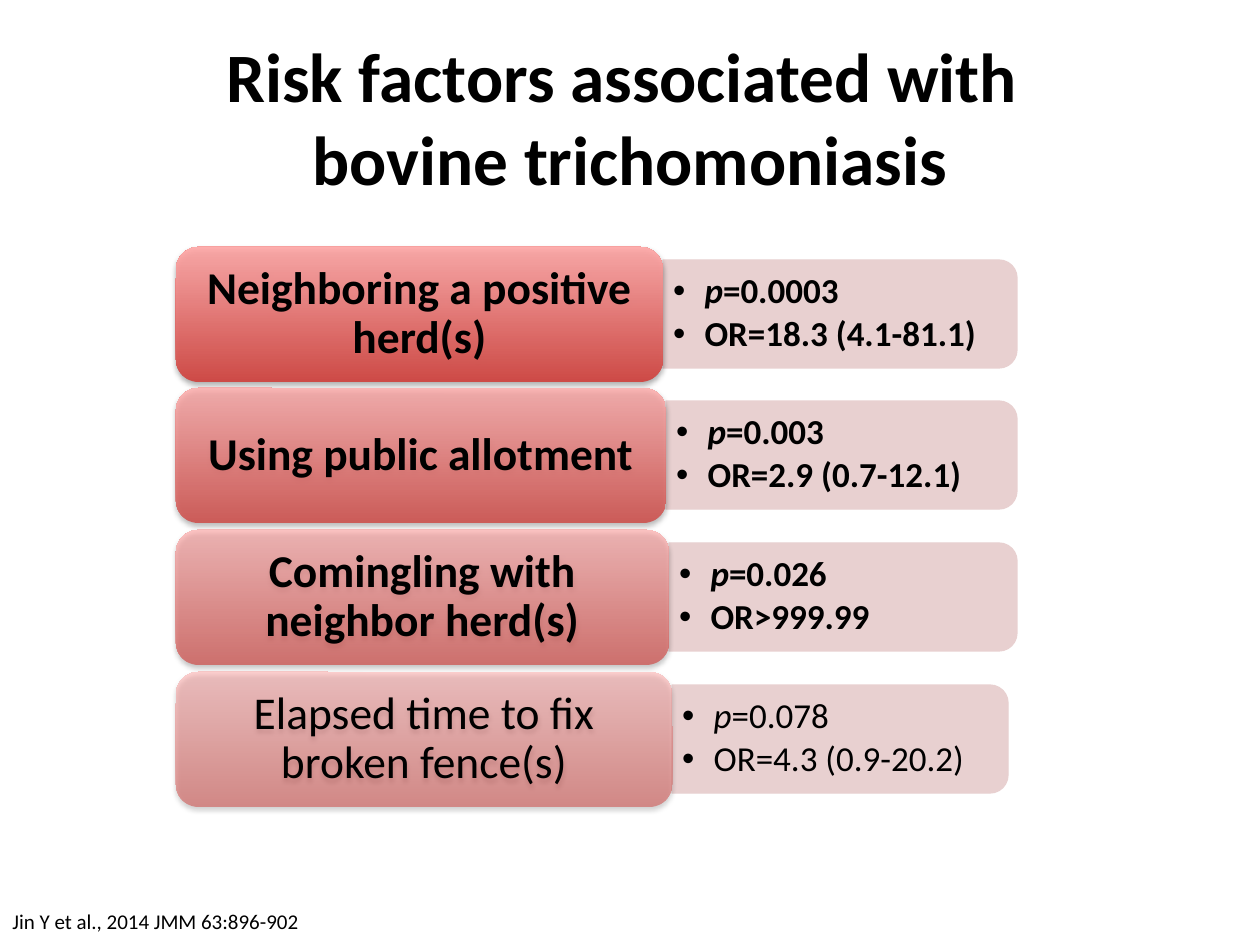
"""Build the slide on risk factors associated with bovine trichomoniasis."""
from lxml import etree
from pptx import Presentation
from pptx.dml.color import RGBColor
from pptx.enum.shapes import MSO_SHAPE as Shape
from pptx.enum.text import MSO_ANCHOR as Anchor, PP_ALIGN as Align
from pptx.oxml import parse_xml
from pptx.oxml.ns import nsdecls, qn
from pptx.util import Emu, Inches, Pt


def px(*lengths):
    return [Emu(round(n * 914400 / 126)) for n in lengths]


def style(r, size, bold=False, italic=False):
    r.font.name, r.font.size = "Calibri", Pt(size)
    r.font.bold, r.font.italic = bold, italic
    r.font.color.rgb = RGBColor.from_string("000000")


SHADOW = (
    f'<a:effectLst {nsdecls("a")}><a:outerShdw blurRad="39370" dist="22860" dir="5400000" '
    'rotWithShape="0"><a:srgbClr val="000000"><a:alpha val="35000"/></a:srgbClr>'
    '</a:outerShdw></a:effectLst>'
)
LEFT, TOP, PILL_H, PANEL_H = 176, 247, 135, 108
rows = [
    ("Neighboring a positive herd(s)", "=0.0003", "OR=18.3 (4.1-81.1)", 487, 1017, 90, True),
    ("Using public allotment", "=0.003", "OR=2.9 (0.7-12.1)", 490, 1017, 77, True),
    ("Comingling with neighbor herd(s)", "=0.026", "OR>999.99", 493, 1017, 63, True),
    ("Elapsed time to fix broken fence(s)", "=0.078", "OR=4.3 (0.9-20.2)", 496, 1008, 50, False),
]

prs = Presentation()
prs.slide_width, prs.slide_height = px(1260, 945)
s = prs.slides.add_slide(prs.slide_layouts[5])

title = s.shapes.title
title.left, title.top, title.width, title.height = px(63, 38, 1134, 157)
title.text_frame.text = "Risk factors associated with \vbovine trichomoniasis"
title.text_frame.vertical_anchor = Anchor.MIDDLE
p = title.text_frame.paragraphs[0]
p.alignment = Align.CENTER
for r in p.runs:
    style(r, 39.6, True)

for i, (label, p_value, odds, pill_w, right, alpha, bold) in enumerate(rows):
    top = TOP + i * 425 // 3
    panel_x, panel_y = LEFT + pill_w, top + (PILL_H - PANEL_H) // 2
    panel_w = right - panel_x

    panel = s.shapes.add_shape(
        Shape.ROUND_2_SAME_RECTANGLE,
        *px(panel_x + (panel_w - PANEL_H) / 2, panel_y + (PANEL_H - panel_w) / 2, PANEL_H, panel_w),
    )
    panel.rotation = 90
    panel.shadow.inherit = False
    panel.fill.solid()
    panel.fill.fore_color.rgb = RGBColor.from_string("E8D0D0")
    panel.line.color.rgb = RGBColor.from_string("E8D0D0")
    panel.line.width = Pt(0.75)

    tf = s.shapes.add_textbox(*px(panel_x, panel_y, panel_w - 5, PANEL_H)).text_frame
    tf.word_wrap, tf.vertical_anchor = True, Anchor.MIDDLE
    tf.margin_left = tf.margin_right = Inches(0.08)
    tf.margin_top = tf.margin_bottom = Inches(0.04)
    tf.text = f"p\n{odds}"
    tf.paragraphs[0].add_run().text = p_value
    for p in tf.paragraphs:
        p.line_spacing, p.space_after = 0.9, Pt(3)
        pPr = p._p.get_or_add_pPr()
        pPr.set("marL", str(Inches(0.25)))
        pPr.set("indent", str(-Inches(0.25)))
        etree.SubElement(pPr, qn("a:buFont")).set("typeface", "Arial")
        etree.SubElement(pPr, qn("a:buChar")).set("char", "•")
        for r in p.runs:
            style(r, 20, bold, r.text == "p")

    pill = s.shapes.add_shape(Shape.ROUNDED_RECTANGLE, *px(LEFT, top, pill_w, PILL_H))
    pill.line.fill.background()
    pill.fill.gradient()
    pill.fill.gradient_angle = 90
    for stop, color in zip(pill.fill.gradient_stops, ("D1403C", "FFA6A5")):
        stop.color.rgb = RGBColor.from_string(color)
    for clr in pill._element.spPr.iter(qn("a:srgbClr")):
        etree.SubElement(clr, qn("a:alpha")).set("val", str(alpha * 1000))
    pill._element.spPr.append(parse_xml(SHADOW))
    tf = pill.text_frame
    tf.word_wrap, tf.vertical_anchor = True, Anchor.MIDDLE
    tf.margin_left = tf.margin_right = Inches(0.11)
    tf.margin_top = tf.margin_bottom = Inches(0.05)
    tf.text = label
    p = tf.paragraphs[0]
    p.alignment, p.line_spacing = Align.CENTER, 0.9
    style(p.runs[0], 26, bold)

tf = s.shapes.add_textbox(*px(0, 902, 316, 38)).text_frame
tf.word_wrap = False
tf.text = "Jin Y et al., 2014 JMM 63:896-902"
style(tf.paragraphs[0].runs[0], 12)

prs.save("out.pptx")
